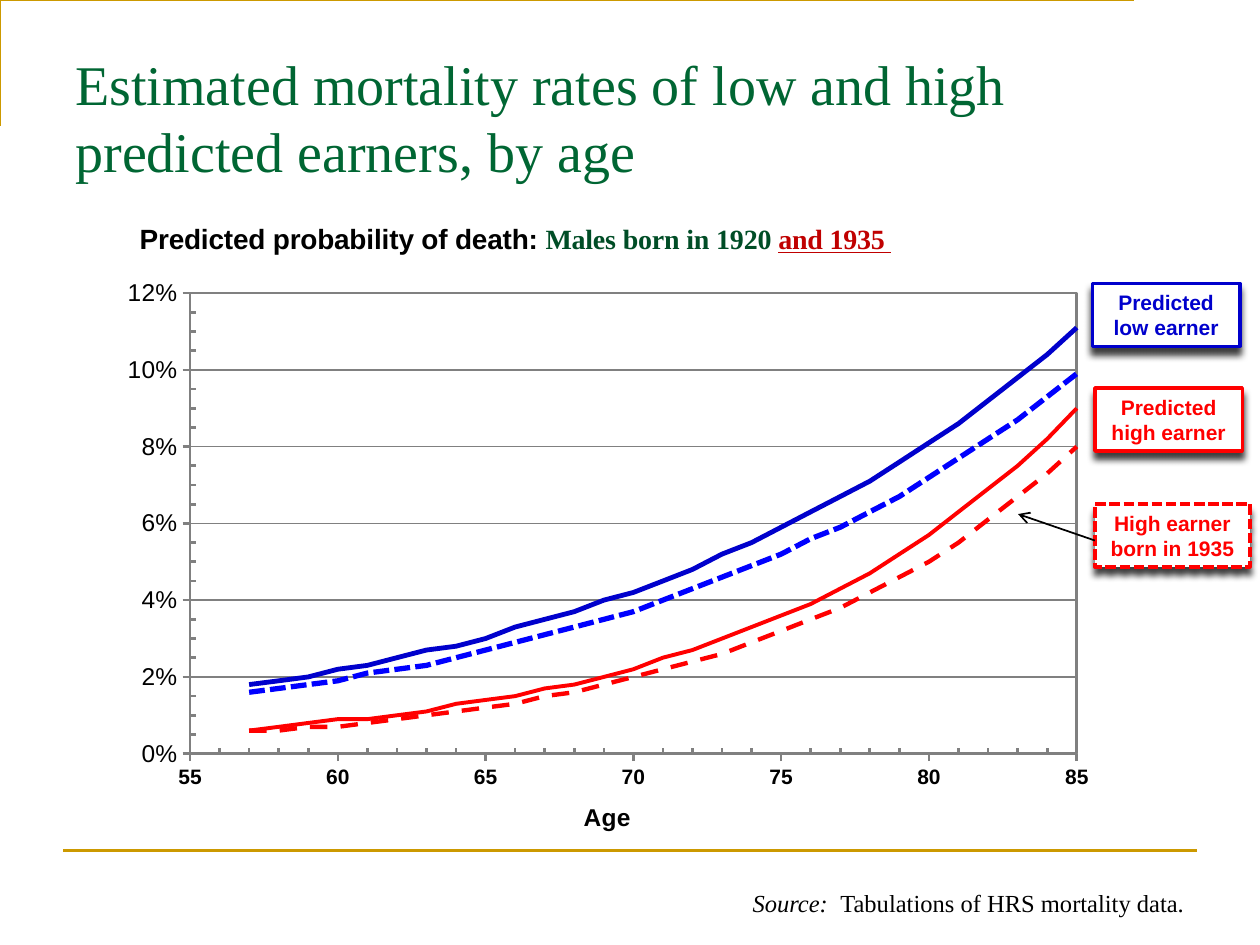
from lxml import etree
from pptx import Presentation
from pptx.chart.data import XyChartData
from pptx.dml.color import RGBColor
from pptx.enum.chart import XL_CHART_TYPE, XL_TICK_MARK
from pptx.enum.dml import MSO_LINE
from pptx.enum.shapes import MSO_CONNECTOR, MSO_SHAPE
from pptx.enum.text import MSO_ANCHOR, PP_ALIGN
from pptx.oxml import parse_xml
from pptx.oxml.ns import nsdecls, qn
from pptx.util import Inches, Pt

SCATTER = XL_CHART_TYPE.XY_SCATTER_SMOOTH_NO_MARKERS
TICK_IN, TICK_OUT = XL_TICK_MARK.INSIDE, XL_TICK_MARK.OUTSIDE
SOLID, DASH, SQUARE_DASH = MSO_LINE.SOLID, MSO_LINE.DASH, MSO_LINE.SQUARE_DOT
LEFT, CENTER, RIGHT = PP_ALIGN.LEFT, PP_ALIGN.CENTER, PP_ALIGN.RIGHT
MIDDLE, TOP = MSO_ANCHOR.MIDDLE, MSO_ANCHOR.TOP

BLACK = RGBColor(0, 0, 0)
WHITE = RGBColor(255, 255, 255)
GOLD = RGBColor(0xCC, 0x99, 0x00)
GREEN = RGBColor(0x00, 0x66, 0x33)
DARK_GREEN = RGBColor(0x00, 0x4D, 0x26)
DARK_RED = RGBColor(0xC0, 0x00, 0x00)
BLUE = RGBColor(0x00, 0x00, 0xFF)
NAVY = RGBColor(0x00, 0x00, 0xCC)
RED = RGBColor(0xFF, 0x00, 0x00)
GRAY = RGBColor(0x80, 0x80, 0x80)
SANS, SERIF = "Arial", "Times New Roman"

# Yearly death probabilities in tenths of a percent, from FIRST_AGE on
FIRST_AGE = 57
CURVES = [
    ("Low earner, born 1935", BLUE, 3, SQUARE_DASH,
     [16, 17, 18, 19, 21, 22, 23, 25, 27, 29, 31, 33, 35, 37, 40, 43, 46, 49,
      52, 56, 59, 63, 67, 72, 77, 82, 87, 93, 99]),
    ("High earner, born 1935", RED, 2.5, DASH,
     [6, 6, 7, 7, 8, 9, 10, 11, 12, 13, 15, 16, 18, 20, 22, 24, 26, 29,
      32, 35, 38, 42, 46, 50, 55, 61, 67, 73, 80]),
    ("Low earner, born 1920", NAVY, 2.75, SOLID,
     [18, 19, 20, 22, 23, 25, 27, 28, 30, 33, 35, 37, 40, 42, 45, 48, 52, 55,
      59, 63, 67, 71, 76, 81, 86, 92, 98, 104, 111]),
    ("High earner, born 1920", RED, 2.25, SOLID,
     [6, 7, 8, 9, 9, 10, 11, 13, 14, 15, 17, 18, 20, 22, 25, 27, 30, 33,
      36, 39, 43, 47, 52, 57, 63, 69, 75, 82, 90]),
]


def style_line(line, color, width, dash=SOLID):
    line.color.rgb = color
    line.width = Pt(width)
    line.dash_style = dash


def style_font(font, size, color=BLACK, name=SANS, bold=False, italic=False):
    font.size, font.name, font.bold, font.italic = Pt(size), name, bold, italic
    font.color.rgb = color


def add_run(p, text, size, **style):
    r = p.add_run()
    r.text = text
    style_font(r.font, size, **style)
    return r


def add_text(slide, box, anchor, align):
    tf = slide.shapes.add_textbox(*map(Inches, box)).text_frame
    tf.word_wrap = True
    tf.vertical_anchor = anchor
    tf.paragraphs[0].alignment = align
    return tf.paragraphs[0]


def add_line(slide, start, end, color, width):
    s = slide.shapes.add_connector(MSO_CONNECTOR.STRAIGHT,
                                   *map(Inches, start + end))
    style_line(s.line, color, width)
    etree.SubElement(s._element.spPr, qn("a:effectLst"))
    return s


def add_label(slide, box, text, color, dash=SOLID):
    sp = slide.shapes.add_shape(MSO_SHAPE.RECTANGLE, *map(Inches, box))
    sp.fill.solid()
    sp.fill.fore_color.rgb = WHITE
    style_line(sp.line, color, 2, dash)
    sp._element.spPr.append(parse_xml(
        f'<a:effectLst {nsdecls("a")}><a:outerShdw blurRad="50800" '
        'dist="50800" dir="5400000" algn="t" rotWithShape="0">'
        '<a:srgbClr val="404040"/></a:outerShdw></a:effectLst>'))
    tf = sp.text_frame
    tf.word_wrap = True
    tf.vertical_anchor = MIDDLE
    p = tf.paragraphs[0]
    p.alignment = CENTER
    add_run(p, text, 12, color=color, bold=True)


def set_layout(parent, index, **places):
    """Fix a chart part at shares of the chart's size."""
    layout = parent.find(qn("c:layout"))
    if layout is None:
        layout = etree.Element(qn("c:layout"))
        parent.insert(index, layout)
    manual = etree.SubElement(layout, qn("c:manualLayout"))
    if "w" in places:
        etree.SubElement(manual, qn("c:layoutTarget"), val="inner")
    for key in ("x", "y"):
        etree.SubElement(manual, qn(f"c:{key}Mode"), val="edge")
    for key, value in places.items():
        etree.SubElement(manual, qn(f"c:{key}"), val=str(value))


def style_axis(axis, low, high, major, minor, size, bold, fmt):
    axis.minimum_scale, axis.maximum_scale = low, high
    axis.major_unit, axis.minor_unit = major, minor
    axis.major_tick_mark, axis.minor_tick_mark = TICK_OUT, TICK_IN
    axis.tick_labels.number_format = fmt
    axis.tick_labels.number_format_is_linked = False
    style_font(axis.tick_labels.font, size, bold=bold)
    style_line(axis.format.line, GRAY, 1.5)


def add_mortality_chart(slide, box):
    data = XyChartData()
    for name, _, _, _, values in CURVES:
        series = data.add_series(name)
        for age, value in enumerate(values, FIRST_AGE):
            series.add_data_point(age, value / 1000)
    chart = slide.shapes.add_chart(SCATTER, *map(Inches, box), data).chart
    chart.has_legend = False
    style_font(chart.font, 10)
    chart.plots[0].vary_by_categories = False
    for s, (_, color, width, dash, _) in zip(chart.plots[0].series, CURVES):
        s.smooth = True
        style_line(s.format.line, color, width, dash)

    # Axes
    ages, rates = chart.category_axis, chart.value_axis
    style_axis(ages, 55, 85, 5, 1, 12, True, "0")
    style_axis(rates, 0, 0.12, 0.02, 0.005, 14, False, "0%")
    ages.has_major_gridlines = False
    rates.has_major_gridlines = True
    style_line(rates.major_gridlines.format.line, GRAY, 1)
    age_title = ages.axis_title
    add_run(age_title.text_frame.paragraphs[0], "Age", 14, bold=True)
    set_layout(age_title._element, 1, x=0.46, y=0.94)

    # Title
    p = chart.chart_title.text_frame.paragraphs[0]
    add_run(p, "Predicted probability of death: ", 16, bold=True)
    add_run(p, "Males born in 1920 ", 16, color=DARK_GREEN, name=SERIF,
            bold=True)
    r = add_run(p, "and 1935 ", 16, color=DARK_RED, name=SERIF, bold=True)
    r.font.underline = True
    set_layout(chart.chart_title._element, 1, x=0.01, y=0.03)

    # Plot area with a frame
    plot_area = chart._chartSpace.chart.plotArea
    set_layout(plot_area, 0, x=0.065, y=0.148, w=0.9, h=0.724)
    plot_area.append(parse_xml(
        f'<c:spPr {nsdecls("c", "a")}><a:noFill/><a:ln w="19050"><a:solidFill>'
        f'<a:srgbClr val="{GRAY}"/></a:solidFill></a:ln></c:spPr>'))


def add_rules(slide):
    corner = slide.shapes.build_freeform(0.42, 0.92, scale=Inches(1))
    corner.add_line_segments([(0.42, 0.25), (9.42, 0.25)], close=False)
    sp = corner.convert_to_shape()
    sp.fill.background()
    sp.shadow.inherit = False
    style_line(sp.line, GOLD, 1.5)
    add_line(slide, (0.5, 6.75), (9.5, 6.75), GOLD, 1.5)


def main():
    prs = Presentation()
    prs.slide_width, prs.slide_height = Inches(10), Inches(7.5)
    slide = prs.slides.add_slide(prs.slide_layouts[6])

    # Frame and heading
    add_rules(slide)
    p = add_text(slide, (0.5, 0.3, 9, 1.25), MIDDLE, LEFT)
    add_run(p, "Estimated mortality rates of low and high predicted earners, "
            "by age", 32, color=GREEN, name=SERIF)

    # Chart and curve labels
    add_mortality_chart(slide, (1, 1.58, 7.82, 5.08))
    add_label(slide, (8.67, 2.25, 1.17, 0.5), "Predicted low earner", NAVY)
    add_label(slide, (8.69, 3.08, 1.17, 0.5), "Predicted high earner", RED)
    add_label(slide, (8.69, 4, 1.23, 0.5), "High earner born in 1935", RED,
              SQUARE_DASH)
    arrow = add_line(slide, (8.69, 4.29), (8.08, 4.08), BLACK, 1)
    etree.SubElement(arrow.line._get_or_add_ln(), qn("a:tailEnd"),
                     type="arrow")

    # Source
    p = add_text(slide, (5.67, 7, 3.83, 0.34), TOP, RIGHT)
    add_run(p, "Source:  ", 14, name=SERIF, italic=True)
    add_run(p, "Tabulations of HRS mortality data.", 14, name=SERIF)

    prs.save("out.pptx")


if __name__ == "__main__":
    main()
